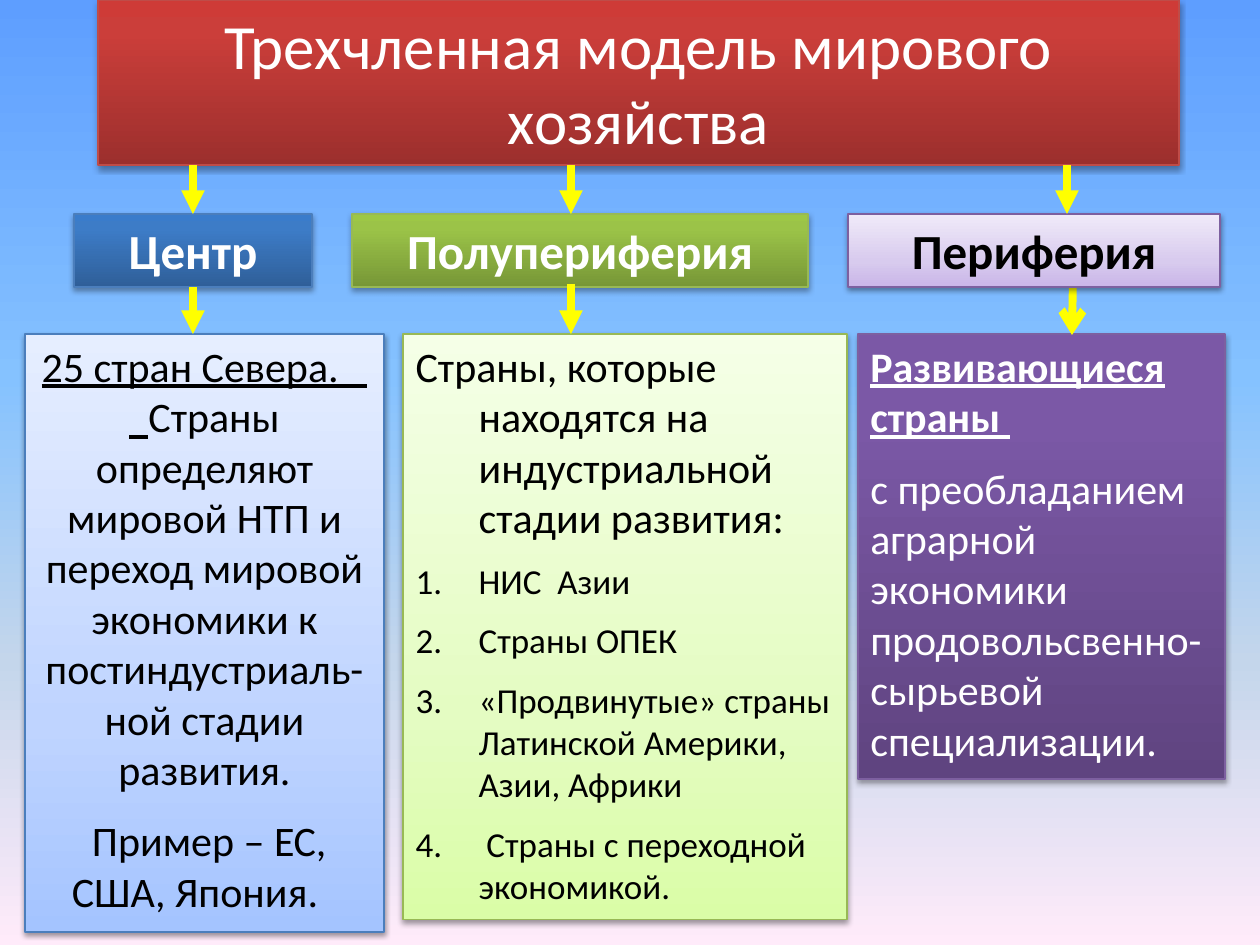
"""Build a slide on the three-part model of the world economy."""
from dataclasses import dataclass

from lxml import etree
from pptx import Presentation
from pptx import util as u
from pptx.dml.color import RGBColor
from pptx.enum import shapes, text
from pptx.oxml.ns import qn

SCALE = 914400 / 126
MID = text.PP_ALIGN.CENTER
LEFT = text.PP_ALIGN.LEFT


@dataclass(frozen=True)
class Theme:
    """Colours and type sizes of the slide."""
    font: str = "Calibri"
    title: int = 36
    head: int = 28
    body: int = 24
    item: int = 20
    white: str = "FFFFFF"
    black: str = "000000"
    arrow: str = "FFFF00"
    sky: tuple = ((0, "5E9EFF"), (40, "85C2FF"), (70, "C4D6EB"), (100, "FFEBFA"))
    red: tuple = ("BF4C48", ((0, "9C2F2D"), (80, "CB3E3A"), (100, "CE3B37")))
    blue: tuple = ("4B7EBC", ((0, "2F5F99"), (80, "3D7CC7"), (100, "3A7CCB")))
    green: tuple = ("98B955", ((0, "779737"), (80, "9BC348"), (100, "9DC746")))
    plum: tuple = ("7D60A0", ((0, "5F4480"), (80, "7B58A6"), (100, "7C57A8")))
    ice: tuple = ("4B7EBC", ((0, "A4C4FF"), (35, "BFD4FF"), (100, "E6EEFF")))
    lime: tuple = ("98B955", ((0, "DAFDA7"), (35, "E4FCC2"), (100, "F5FFE7")))
    lilac: tuple = ("7D60A0", ((0, "C9B5E8"), (35, "D8CBEE"), (100, "F0EAF9")))


T = Theme()


def px(n):
    """Turn pixels into EMU."""
    return u.Emu(round(n * SCALE))


def assign(obj, vals):
    """Set attributes from a dict."""
    for key, val in vals.items():
        setattr(obj, key, val)


def node(root, tag, **attrs):
    """Add an XML child with attributes."""
    item = etree.SubElement(root, qn(tag))
    for key, val in attrs.items():
        item.set(key, str(val))
    return item


def blend(fill, root, stops, angle):
    """Give a fill a gradient with any number of stops."""
    fill.gradient()
    fill.gradient_angle = angle
    group = root.find(".//" + qn("a:gsLst"))
    for old in list(group):
        group.remove(old)
    for pos, tone in stops:
        node(node(group, "a:gs", pos=pos * 1000), "a:srgbClr", val=tone)


def shade(shape, alpha, dist):
    """Cast a soft shadow straight down."""
    shape.shadow.inherit = False
    group = shape._element.spPr.find(qn("a:effectLst"))
    cast = node(group, "a:outerShdw", blurRad=40000, dist=dist, dir=5400000, rotWithShape=0)
    node(node(cast, "a:srgbClr", val=T.black), "a:alpha", val=alpha * 1000)


def dress(shape, box, skin):
    """Place and paint a panel, and set up its text frame."""
    edge, stops = skin
    assign(shape, dict(zip(("left", "top", "width", "height"), map(px, box))))
    blend(shape.fill, shape._element.spPr, stops, 90)
    shape.line.color.rgb = RGBColor.from_string(edge)
    shape.line.width = u.Pt(0.75)
    shade(shape, *((38, 20000) if stops[1][0] == 35 else (35, 23000)))
    assign(shape.text_frame, {
        "word_wrap": True,
        "auto_size": text.MSO_AUTO_SIZE.SHAPE_TO_FIT_TEXT,
        "vertical_anchor": text.MSO_ANCHOR.TOP,
    })
    return shape


def write(shape, paras, size, tone, align=MID):
    """Fill a shape with paragraphs made of (words, format) runs."""
    frame = shape.text_frame
    for i, runs in enumerate(paras):
        para = frame.add_paragraph() if i else frame.paragraphs[0]
        para.alignment = align
        gap = node(para._p.get_or_add_pPr(), "a:spcBef")
        node(gap, "a:spcPct", val=50000)
        for words, form in runs:
            run = para.add_run()
            run.text = words
            run.font.color.rgb = RGBColor.from_string(tone)
            assign(run.font, {"name": T.font, "size": u.Pt(size), **form})


def number(shape):
    """Hang all paragraphs and number those after the first."""
    for i, para in enumerate(shape.text_frame.paragraphs):
        props = para._p.get_or_add_pPr()
        props.set("marL", "457200")
        props.set("indent", "-457200")
        if i:
            node(props, "a:buFont", typeface="+mj-lt")
            node(props, "a:buAutoNum", type="arabicPeriod")
        else:
            node(props, "a:buNone")


def panel(slide, box, skin):
    """Add a painted rectangle."""
    shape = slide.shapes.add_shape(shapes.MSO_SHAPE.RECTANGLE, *map(px, box))
    return dress(shape, box, skin)


def header(slide, left, width, words, skin, tone):
    """Add the heading of one column."""
    shape = panel(slide, (left, 214, width, 73), skin)
    write(shape, [[(words, {"bold": True})]], T.head, tone)
    return shape


def arrow(slide, start, end, head="triangle"):
    """Add a thick arrow."""
    line = slide.shapes.add_connector(
        shapes.MSO_CONNECTOR.STRAIGHT, *map(px, (*start, *end)))
    line.line.color.rgb = RGBColor.from_string(T.arrow)
    line.line.width = u.Pt(4.5)
    node(line.line._get_or_add_ln(), "a:tailEnd", type=head)
    node(line._element.spPr, "a:effectLst")
    return line


def main():
    """Build and save the slide."""
    deck = Presentation()
    assign(deck, {"slide_width": px(1260), "slide_height": px(945)})
    slide = deck.slides.add_slide(deck.slide_layouts[1])
    blend(slide.background.fill, slide._element.cSld, T.sky, 270)

    title = dress(slide.shapes.title, (98, 0, 1081, 165), T.red)
    write(title, [[("Трехчленная модель мирового хозяйства", {})]], T.title, T.white)

    semi = dress(slide.placeholders[1], (403, 334, 444, 598), T.lime)
    small = {"size": u.Pt(T.item)}
    items = ("НИС  Азии", "Страны ОПЕК",
             "«Продвинутые» страны Латинской Америки, Азии, Африки",
             " Страны с переходной экономикой.")
    lead = "Страны, которые находятся на индустриальной стадии развития:"
    write(semi, [[(lead, {})], *([(item, small)] for item in items)],
          T.body, T.black, LEFT)
    number(semi)

    core = panel(slide, (25, 334, 359, 598), T.ice)
    write(core, [
        [("25 стран Севера.      ", {"underline": True}),
         ("Страны определяют мировой НТП и переход мировой экономики к "
          "постиндустриаль-ной стадии развития.", {})],
        [(" Пример – ЕС, США, Япония.  ", {})],
    ], T.body, T.black)

    rim = panel(slide, (858, 334, 367, 445), T.plum)
    write(rim, [
        [("Развивающиеся страны ", {"bold": True, "underline": True})],
        [("с преобладанием аграрной экономики продовольсвенно-сырьевой "
          "специализации.", {})],
    ], T.body, T.white, LEFT)

    hub = header(slide, 74, 238, "Центр", T.blue, T.white)
    header(slide, 352, 456, "Полупериферия", T.green, T.white)
    arrow(slide, (1073, 276), (1072, 335), "arrow")
    header(slide, 848, 372, "Периферия", T.lilac, T.black)

    drops = [arrow(slide, (x, 165), (x, 214)) for x in (193, 571, 1067)]
    falls = [arrow(slide, (x, 284), (x, 334)) for x in (193, 571)]
    drops[0].end_connect(hub, 0)
    falls[0].begin_connect(hub, 2)
    deck.save("out.pptx")


if __name__ == "__main__":
    main()
